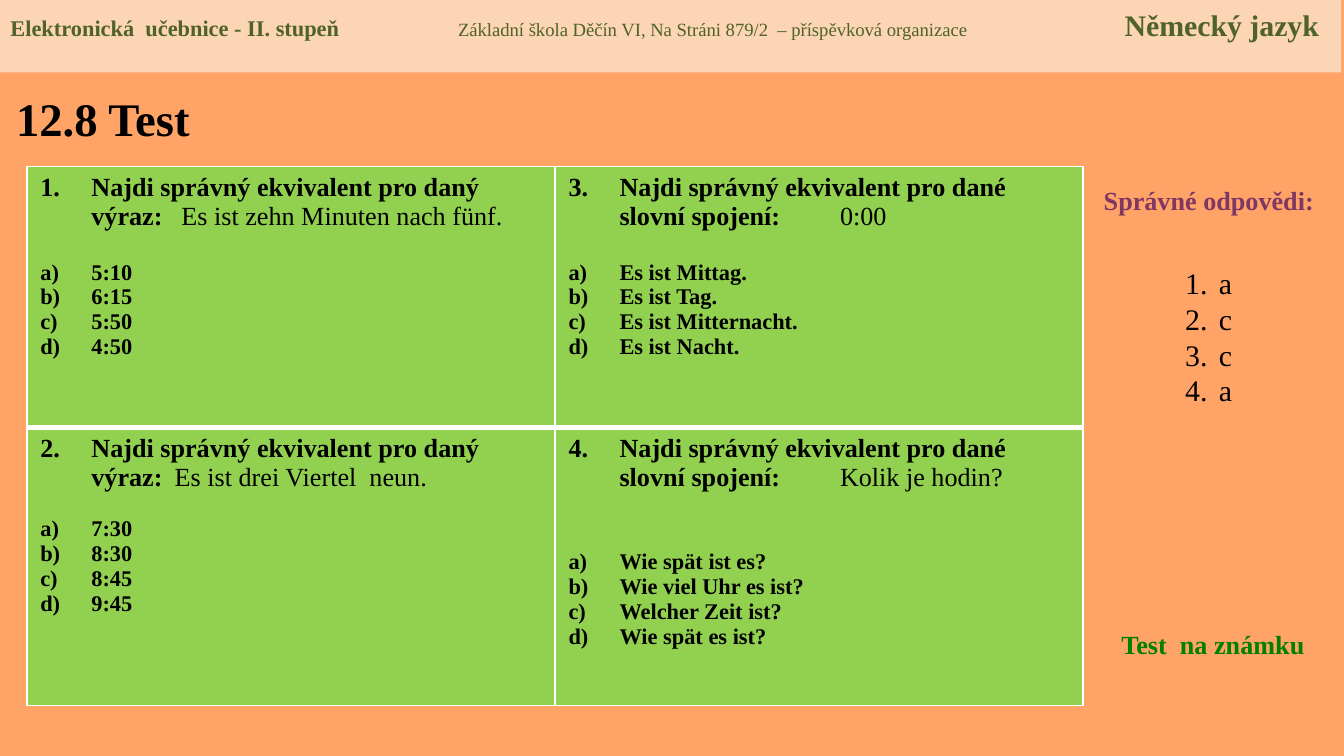
from lxml import etree
from pptx import Presentation, util as u
from pptx.dml.color import RGBColor
from pptx.enum import shapes, text
from pptx.oxml.ns import qn

ORANGE = RGBColor(0xFF, 0xA3, 0x66)
PEACH = RGBColor(0xFC, 0xD5, 0xB5)
GREEN = RGBColor(0x92, 0xD0, 0x50)
OLIVE = RGBColor(0x4F, 0x62, 0x28)
PLUM = RGBColor(0x81, 0x37, 0x63)
DARK_GREEN = RGBColor(0x00, 0x80, 0x00)
BLACK = RGBColor(0, 0, 0)


def style(run, size, color=BLACK, bold=True):
    run.font.name = "Times New Roman"
    run.font.size = u.Pt(size)
    run.font.bold = bold
    run.font.color.rgb = color


def layout_paragraph(paragraph, indent=0, numbering=None, start=1, tabs=()):
    props = paragraph._p.get_or_add_pPr()
    if numbering:
        props.set("marL", str(u.Inches(indent)))
        props.set("indent", str(-u.Inches(indent)))
        number = etree.SubElement(props, qn("a:buAutoNum"), type=numbering)
        if start > 1:
            number.set("startAt", str(start))
    if tabs:
        stops = etree.SubElement(props, qn("a:tabLst"))
        for stop in tabs:
            etree.SubElement(stops, qn("a:tab"), pos=str(u.Inches(stop)), algn="l")


prs = Presentation()
prs.slide_width, prs.slide_height = u.Inches(10), u.Inches(10 * 9 / 16)
slide = prs.slides.add_slide(prs.slide_layouts[5])
slide.background.fill.solid()
slide.background.fill.fore_color.rgb = ORANGE

title = slide.shapes.title
title.left, title.top = u.Inches(0.02), u.Inches(0.55)
title.width, title.height = u.Inches(3.19), u.Inches(0.65)
title.text_frame.text = "12.8 Test"
title.text_frame.vertical_anchor = text.MSO_ANCHOR.MIDDLE
title.text_frame.paragraphs[0].alignment = text.PP_ALIGN.LEFT
style(title.text_frame.paragraphs[0].runs[0], 25)

questions = [
    [(1, "daný výraz:", "Es ist zehn Minuten nach fünf.", 1.05, 15.5,
      ["5:10", "6:15", "5:50", "4:50"]),
     (3, "dané\vslovní spojení:", "0:00", 2.02, 15.5,
      ["Es ist Mittag.", "Es ist Tag.", "Es ist Mitternacht.", "Es ist Nacht."])],
    [(2, "daný výraz:", "Es ist drei Viertel  neun.", 1, 13.5,
      ["7:30", "8:30", "8:45", "9:45"]),
     (4, "dané\vslovní spojení:", "Kolik je hodin?", 2.02, 31,
      ["Wie spät ist es?", "Wie viel Uhr es ist?", "Welcher Zeit ist?", "Wie spät es ist?"])],
]
test = slide.shapes.add_table(2, 2, u.Inches(0.2), u.Inches(1.24),
                              u.Inches(7.86), u.Inches(4.01)).table
for row, height in zip(test.rows, (1.94, 2.07)):
    row.height = u.Inches(height)

for row, row_questions in enumerate(questions):
    for col, (number, subject, phrase, phrase_tab, gap, options) in enumerate(row_questions):
        cell = test.cell(row, col)
        borders = {"lnL": 1, "lnR": 1, "lnT": 1 + 2 * row, "lnB": 3 - 2 * row}
        for edge, width in borders.items():
            line = etree.SubElement(cell._tc.get_or_add_tcPr(), qn(f"a:{edge}"), w=str(u.Pt(width)))
            etree.SubElement(etree.SubElement(line, qn("a:solidFill")), qn("a:srgbClr"), val="FFFFFF")
        cell.fill.solid()
        cell.fill.fore_color.rgb = GREEN

        question = cell.text_frame.paragraphs[0]
        question.text = f"Najdi správný ekvivalent pro {subject}"
        layout_paragraph(question, 0.38, "arabicPeriod", number, [phrase_tab])
        for run in question.runs:
            style(run, 14)
        answer_phrase = question.add_run()
        answer_phrase.text = f"\t{phrase}"
        style(answer_phrase, 14, bold=False)

        for index, option in enumerate(options):
            choice = cell.text_frame.add_paragraph()
            choice.text = option
            layout_paragraph(choice, 0.38, "alphaLcParenR")
            if index == 0:
                choice.space_before = u.Pt(gap)
            style(choice.runs[0], 12)

side_labels = [
    ("Správné odpovědi:", 8.05, 1.32, 1.89, PLUM),
    ("Test  na známku", 8.24, 4.63, 1.57, DARK_GREEN),
]
for label, left, top, width, color in side_labels:
    frame = slide.shapes.add_textbox(u.Inches(left), u.Inches(top),
                                     u.Inches(width), u.Inches(0.34)).text_frame
    frame.word_wrap = True
    frame.text = label
    frame.paragraphs[0].alignment = text.PP_ALIGN.CENTER
    style(frame.paragraphs[0].runs[0], 14, color)

answers = slide.shapes.add_textbox(u.Inches(8.72), u.Inches(1.92),
                                   u.Inches(0.55), u.Inches(1.72)).text_frame
answers.word_wrap = True
answers.text = "a\nc\nc\na"
for answer in answers.paragraphs:
    layout_paragraph(answer, 0.25, "arabicPeriod")
    style(answer.runs[0], 16, bold=False)

header = slide.shapes.add_shape(shapes.MSO_SHAPE.RECTANGLE, u.Inches(-0.02), 0,
                                u.Inches(10), u.Inches(0.54))
header.shadow.inherit = False
header.fill.solid()
header.fill.fore_color.rgb = PEACH
header.line.fill.background()
header.text_frame.word_wrap = True
header.text_frame.vertical_anchor = text.MSO_ANCHOR.TOP
heading = header.text_frame.paragraphs[0]
heading.alignment = text.PP_ALIGN.LEFT
layout_paragraph(heading, tabs=[3.33, 8.29])
for part, size, bold in [
    ("Elektronická  učebnice - II. stupeň", 12, True),
    ("\tZákladní škola Děčín VI, Na Stráni 879/2  – příspěvková organizace", 10, False),
    ("\tNěmecký jazyk", 16, True),
]:
    run = heading.add_run()
    run.text = part
    style(run, size, OLIVE, bold)

prs.save("out.pptx")
